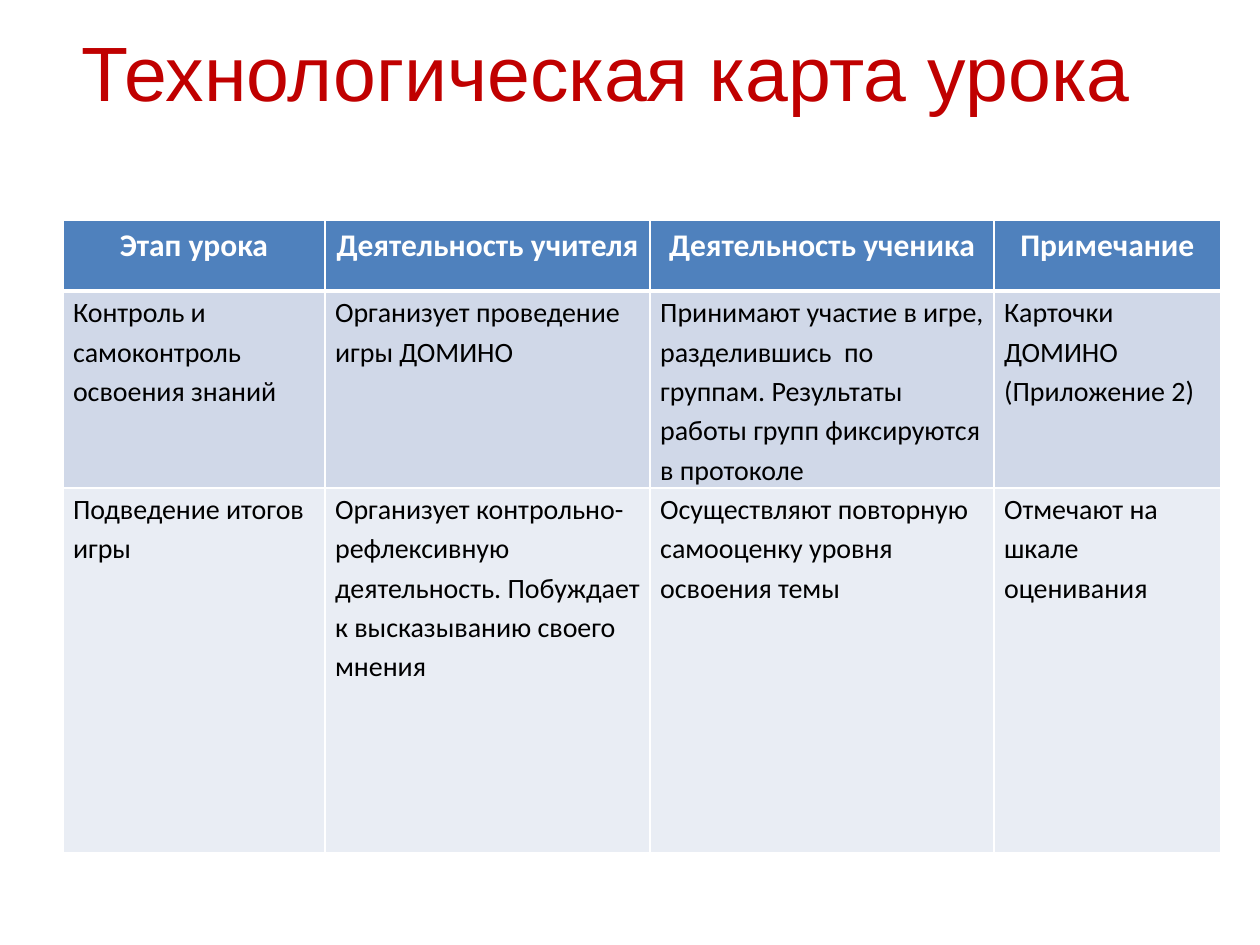
from lxml import etree
from pptx import Presentation
from pptx.dml.color import RGBColor
from pptx.enum.text import MSO_ANCHOR, PP_ALIGN
from pptx.oxml.ns import qn
from pptx.util import Inches, Pt

TITLE = "Технологическая карта урока"
COLUMN_WIDTHS = [2.08, 2.58, 2.73, 1.8]
ROW_HEIGHTS = [0.56, 0.76, 2.9]
ROW_FILLS = ["4F81BD", "D0D8E8", "E9EDF4"]
LESSON_ROWS = [
    ["Этап урока", "Деятельность учителя", "Деятельность ученика", "Примечание"],
    [
        "Контроль и самоконтроль освоения знаний",
        "Организует проведение игры ДОМИНО",
        "Принимают участие в игре, разделившись  по группам. "
        "Результаты работы групп фиксируются в протоколе",
        "Карточки ДОМИНО (Приложение 2)",
    ],
    [
        "Подведение итогов игры",
        "Организует контрольно-рефлексивную деятельность. "
        "Побуждает к высказыванию своего мнения",
        "Осуществляют повторную самооценку уровня освоения темы",
        "Отмечают на шкале оценивания",
    ],
]
HEADER_FONT = {"name": "Calibri", "size": Pt(18), "bold": True}
BODY_FONT = {"name": "Calibri", "size": Pt(16), "bold": False}
TITLE_FONT = {"name": "Arial", "size": Pt(44)}
CELL_MARGINS = {
    "margin_left": Inches(0.08),
    "margin_top": 0,
    "margin_right": Inches(0.08),
    "margin_bottom": 0,
}


def color(value):
    return RGBColor.from_string(value)


def set_attributes(target, values):
    for name, value in values.items():
        setattr(target, name, value)


def write_text(paragraph, text, font_values, font_color):
    run = paragraph.add_run()
    run.text = text
    set_attributes(run.font, font_values)
    run.font.color.rgb = color(font_color)


def set_borders(cell, bottom_width):
    """Draw white cell borders; they must precede the fill in the XML."""
    properties = cell._tc.get_or_add_tcPr()
    widths = {"lnL": 1, "lnR": 1, "lnT": 1, "lnB": bottom_width}
    for position, (side, width) in enumerate(widths.items()):
        line = etree.Element(qn(f"a:{side}"), w=str(Pt(width)))
        fill = etree.SubElement(line, qn("a:solidFill"))
        etree.SubElement(fill, qn("a:srgbClr"), val="FFFFFF")
        properties.insert(position, line)


def add_title(slide, left, top, width, height):
    shape = slide.shapes.add_textbox(left, top, width, height)
    frame = shape.text_frame
    frame.word_wrap = True
    frame.vertical_anchor = MSO_ANCHOR.MIDDLE
    write_text(frame.paragraphs[0], TITLE, TITLE_FONT, "C00000")


def fill_cell(cell, text, fill_color, is_header):
    set_attributes(cell, CELL_MARGINS)
    cell.fill.solid()
    cell.fill.fore_color.rgb = color(fill_color)
    set_borders(cell, 3 if is_header else 1)
    paragraph = cell.text_frame.paragraphs[0]
    paragraph.line_spacing = 1.15
    paragraph.alignment = PP_ALIGN.CENTER if is_header else PP_ALIGN.LEFT
    if is_header:
        write_text(paragraph, text, HEADER_FONT, "FFFFFF")
    else:
        write_text(paragraph, text, BODY_FONT, "000000")


def add_lesson_table(slide, left, top, width, height):
    table = slide.shapes.add_table(
        len(LESSON_ROWS), len(COLUMN_WIDTHS), left, top, width, height
    ).table
    table.horz_banding = False
    for column, column_width in zip(table.columns, COLUMN_WIDTHS):
        column.width = Inches(column_width)
    for row, row_height in zip(table.rows, ROW_HEIGHTS):
        row.height = Inches(row_height)

    # Header row first, then the lesson stages
    for row_index, texts in enumerate(LESSON_ROWS):
        for column_index, text in enumerate(texts):
            cell = table.cell(row_index, column_index)
            fill_cell(cell, text, ROW_FILLS[row_index], row_index == 0)


def main():
    presentation = Presentation()
    presentation.slide_width = Inches(10)
    presentation.slide_height = Inches(7.5)
    slide = presentation.slides.add_slide(presentation.slide_layouts[6])

    # Lesson plan table
    add_lesson_table(
        slide, Inches(0.5), Inches(1.75),
        Inches(sum(COLUMN_WIDTHS)), Inches(sum(ROW_HEIGHTS)),
    )
    # Slide title
    add_title(slide, Inches(0.55), Inches(0.09), Inches(9.45), Inches(0.94))

    presentation.save("out.pptx")


if __name__ == "__main__":
    main()
